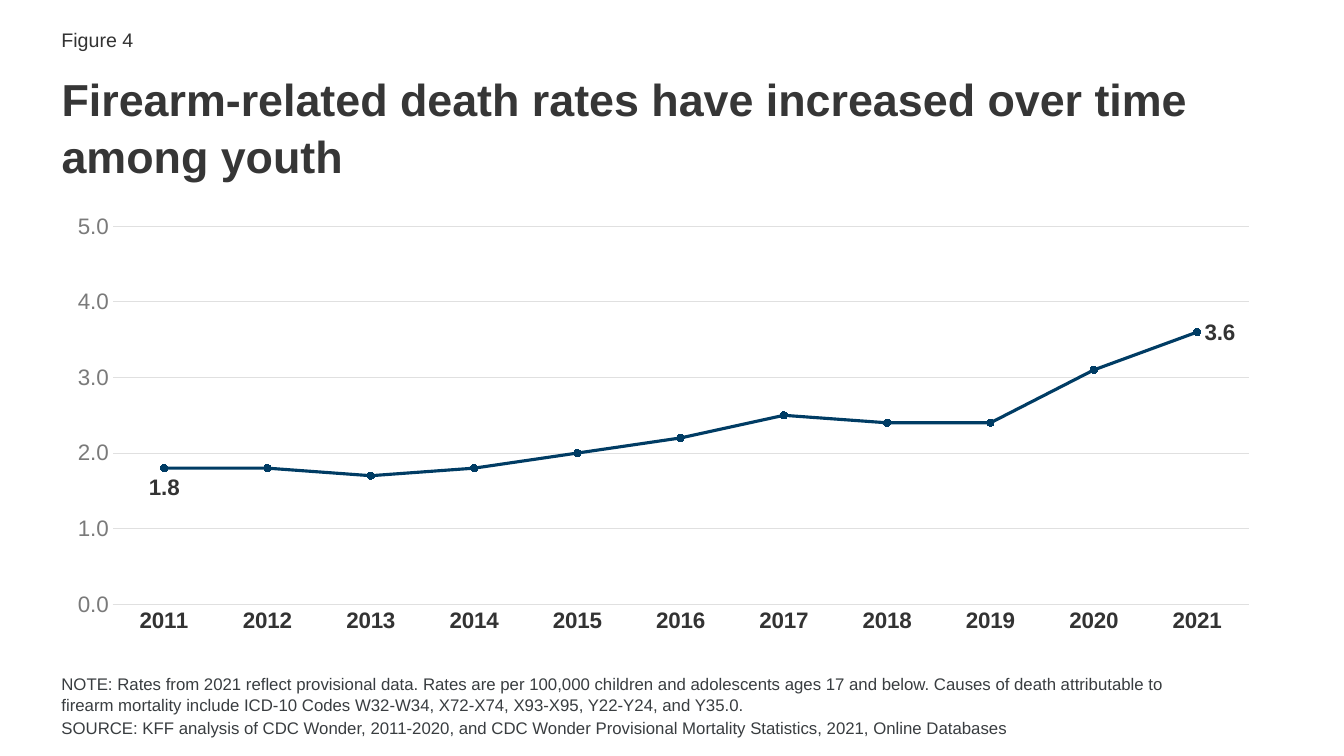
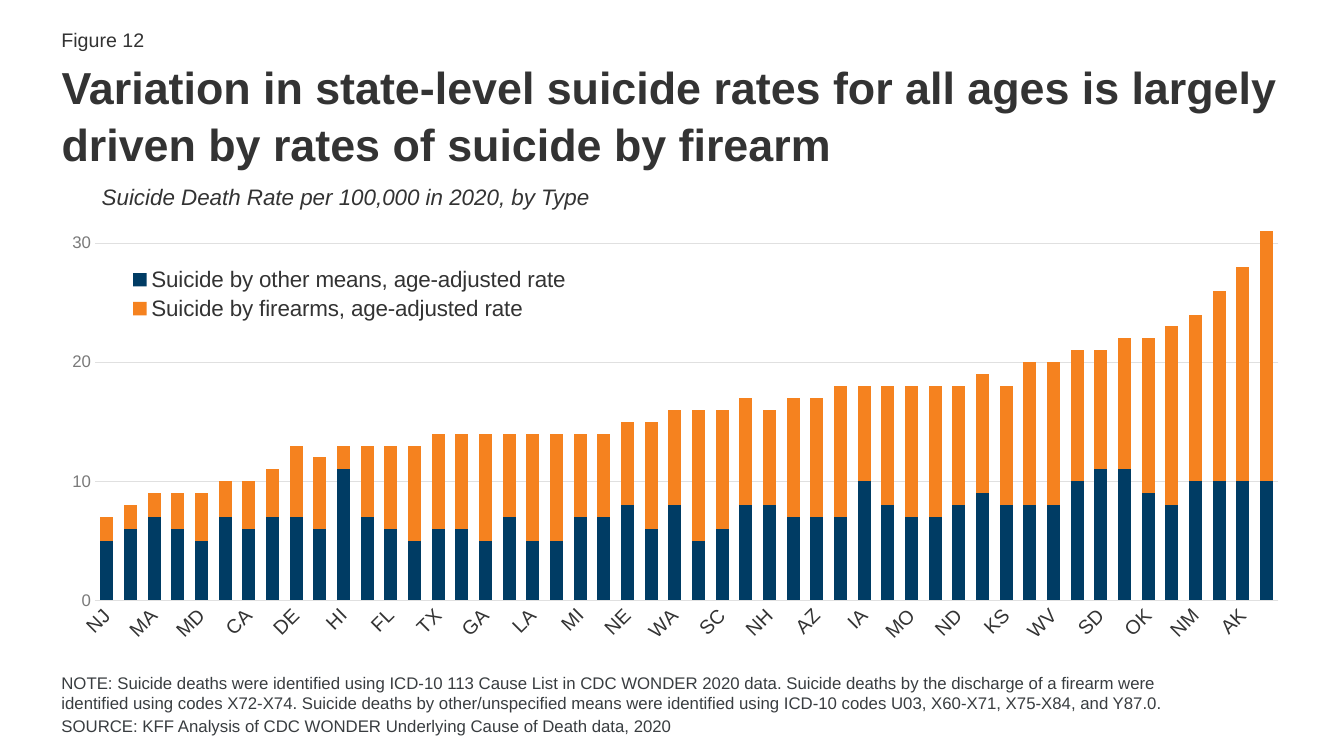
from lxml.etree import SubElement
from pptx import Presentation
from pptx.chart.data import CategoryChartData
from pptx.dml.color import RGBColor
from pptx.enum.chart import XL_CHART_TYPE, XL_LABEL_POSITION, XL_LEGEND_POSITION, XL_MARKER_STYLE, XL_TICK_MARK
from pptx.enum.text import MSO_ANCHOR, MSO_AUTO_SIZE, PP_ALIGN
from pptx.oxml.ns import qn
from pptx.util import Inches, Pt

WIDTH, HEIGHT = Inches(13.33), Inches(7.5)
FONT = "Arial"
INK, GREY, NOTE_INK, GRID = "333333", "7A7A7A", "393D40", "E0E0E0"
NAVY, ORANGE = "003C64", "F5821F"
LEFT = 3.83

FIGURE_BOX = (LEFT, 2.93, 38.63, 4.67)
SUBTITLE_BOX = (6.83, 23.6, 71.85, 4.93)

YEARS = [str(year) for year in range(2011, 2022)]
YOUTH_RATES = [1.8, 1.8, 1.7, 1.8, 2, 2.2, 2.5, 2.4, 2.4, 3.1, 3.6]

STATES = (
    "NJ NY MA RI MD CT CA IL DE PA HI MN FL NC TX VA GA OH LA MS MI WI NE IN WA "
    "AL SC ME NH TN AZ KY IA VT MO NV ND OR KS AR WV UT SD CO OK ID NM MT AK WY"
).split()
OTHER_MEANS = [
    5, 6, 7, 6, 5, 7, 6, 7, 7, 6, 11, 7, 6, 5, 6, 6, 5, 7, 5, 5, 7, 7, 8, 6, 8,
    5, 6, 8, 8, 7, 7, 7, 10, 8, 7, 7, 8, 9, 8, 8, 8, 10, 11, 11, 9, 8, 10, 10, 10, 10,
]
FIREARMS = [
    2, 2, 2, 3, 4, 3, 4, 4, 6, 6, 2, 6, 7, 8, 8, 8, 9, 7, 9, 9, 7, 7, 7, 9, 8,
    11, 10, 9, 8, 10, 10, 11, 8, 10, 11, 11, 10, 10, 10, 12, 12, 11, 10, 11, 13, 15, 14, 16, 18, 21,
]


def rgb(color):
    return RGBColor.from_string(color)


def place(box):
    left, top, width, height = box
    return (
        round(WIDTH * left / 100), round(HEIGHT * top / 100),
        round(WIDTH * width / 100), round(HEIGHT * height / 100),
    )


def assign(target, values):
    for name, value in values.items():
        setattr(target, name, value)


def set_font(font, size, color=INK, bold=False, italic=False):
    assign(font, {"name": FONT, "size": Pt(size), "bold": bold, "italic": italic})
    font.color.rgb = rgb(color)


def write(frame, lines, size, color=INK, anchor=MSO_ANCHOR.TOP, spacing=1.0, **emphasis):
    assign(frame, {"word_wrap": True, "auto_size": MSO_AUTO_SIZE.NONE, "vertical_anchor": anchor})
    for index, line in enumerate(lines):
        paragraph = frame.add_paragraph() if index else frame.paragraphs[0]
        assign(paragraph, {
            "text": line, "alignment": PP_ALIGN.LEFT, "line_spacing": spacing,
            "space_before": Pt(size * 0.2 if index else 0),
        })
        set_font(paragraph.font, size, color, **emphasis)


def add_text(slide, box, lines, size, **format_values):
    write(slide.shapes.add_textbox(*place(box)).text_frame, lines, size, **format_values)


def add_figure_slide(deck, figure, title, title_top, title_color, notes, notes_top):
    slide = deck.slides.add_slide(deck.slide_layouts[5])
    heading = slide.shapes.title
    left, top, width, height = place((LEFT, title_top, 92.4, 12.53))
    assign(heading, {"left": left, "top": top, "width": width, "height": height})
    write(heading.text_frame, [title], 32, color=title_color, spacing=1.05, bold=True)
    add_text(slide, FIGURE_BOX, [figure], 14, anchor=MSO_ANCHOR.MIDDLE)
    add_text(slide, (LEFT, notes_top, 84.45, 8.67), notes, 12, color=NOTE_INK)
    return slide


def set_layout(parent, position, shares, inner=False):
    for old in parent.findall(qn("c:layout")):
        parent.remove(old)
    layout = parent.makeelement(qn("c:layout"), {})
    parent.insert(position, layout)
    manual = SubElement(layout, qn("c:manualLayout"))
    settings = {"layoutTarget": "inner"} if inner else {}
    settings.update({"xMode": "edge", "yMode": "edge"})
    settings.update(zip("xywh", shares))
    for tag, value in settings.items():
        SubElement(manual, qn("c:" + tag)).set("val", str(value))


def style_axis(axis, size, color, bold=False):
    assign(axis, {"major_tick_mark": XL_TICK_MARK.NONE, "minor_tick_mark": XL_TICK_MARK.NONE})
    set_font(axis.tick_labels.font, size, color, bold)


def style_gridline(line):
    line.color.rgb = rgb(GRID)
    line.width = Pt(0.75)


def add_rate_chart(slide, box, kind, categories, rates, plot, scale, category_font, value_size):
    rate_data = CategoryChartData()
    rate_data.categories = categories
    for name, values in rates.items():
        rate_data.add_series(name, values)
    chart = slide.shapes.add_chart(kind, *place(box), rate_data).chart
    assign(chart, {"has_title": False, "has_legend": False})
    set_font(chart.font, 10)
    chart.plots[0].vary_by_categories = False
    style_axis(chart.category_axis, *category_font)
    style_gridline(chart.category_axis.format.line)
    value_axis = chart.value_axis
    style_axis(value_axis, value_size, GREY)
    value_axis.format.line.fill.background()
    maximum, step = scale
    assign(value_axis, {
        "minimum_scale": 0, "maximum_scale": maximum, "major_unit": step, "has_major_gridlines": True,
    })
    style_gridline(value_axis.major_gridlines.format.line)
    set_layout(chart.plots[0]._element.getparent(), 0, plot, inner=True)
    return chart


def add_youth_trend(slide, box):
    chart = add_rate_chart(
        slide, box, XL_CHART_TYPE.LINE_MARKERS, YEARS, {"Series 1": YOUTH_RATES},
        (0.05, 0.05, 0.93, 0.87), (5, 1), (16, INK, True), 16,
    )
    assign(chart.value_axis.tick_labels, {"number_format": "#,##0.0", "number_format_is_linked": False})
    trend = chart.series[0]
    trend.smooth = False
    trend.format.line.color.rgb = rgb(NAVY)
    trend.format.line.width = Pt(2.25)
    assign(trend.marker, {"style": XL_MARKER_STYLE.CIRCLE, "size": 5})
    trend.marker.format.fill.solid()
    trend.marker.format.fill.fore_color.rgb = rgb(NAVY)
    trend.marker.format.line.color.rgb = rgb(NAVY)
    trend.data_labels.show_value = False
    ends = {0: XL_LABEL_POSITION.BELOW, len(YEARS) - 1: XL_LABEL_POSITION.RIGHT}
    for index, position in ends.items():
        label = trend.points[index].data_label
        set_font(label.font, 16, bold=True)
        label.position = position


def add_state_columns(slide, box):
    chart = add_rate_chart(
        slide, box, XL_CHART_TYPE.COLUMN_STACKED, STATES,
        {
            "Suicide by other means, age-adjusted rate": OTHER_MEANS,
            "Suicide by firearms, age-adjusted rate": FIREARMS,
        },
        (0.035, 0.034, 0.953, 0.871), (35, 10), (14, INK), 12,
    )
    assign(chart.plots[0], {"gap_width": 80, "overlap": 100})
    for means, color in zip(chart.series, (NAVY, ORANGE)):
        means.format.fill.solid()
        means.format.fill.fore_color.rgb = rgb(color)
    chart.category_axis._element.xpath("c:txPr/a:bodyPr")[0].set("rot", "-2700000")
    chart.has_legend = True
    assign(chart.legend, {"position": XL_LEGEND_POSITION.BOTTOM, "include_in_layout": False})
    set_font(chart.legend.font, 16)
    set_layout(chart.legend._element, 1, (0.05, 0.2, 0.38, 0.13))


def main():
    deck = Presentation()
    assign(deck, {"slide_width": WIDTH, "slide_height": HEIGHT})

    youth = add_figure_slide(
        deck, "Figure 4", "Firearm-related death rates have increased over time among youth", 8.53, "363636",
        [
            "NOTE: Rates from 2021 reflect provisional data. Rates are per 100,000 children and adolescents "
            "ages 17 and below. Causes of death attributable to firearm mortality include ICD-10 Codes "
            "W32-W34, X72-X74, X93-X95, Y22-Y24, and Y35.0.",
            "SOURCE: KFF analysis of CDC Wonder, 2011-2020, and CDC Wonder Provisional Mortality Statistics, "
            "2021, Online Databases",
        ], 88.53,
    )
    add_youth_trend(youth, (LEFT, 27.07, 90.9, 57.47))

    states = add_figure_slide(
        deck, "Figure 12",
        "Variation in state-level suicide rates for all ages is largely driven by rates of suicide by firearm",
        6.93, INK,
        [
            "NOTE: Suicide deaths were identified using ICD-10 113 Cause List in CDC WONDER 2020 data. Suicide "
            "deaths by the discharge of a firearm were identified using codes X72-X74. Suicide deaths by "
            "other/unspecified means were identified using ICD-10 codes U03, X60-X71, X75-X84, and Y87.0.",
            "SOURCE: KFF Analysis of CDC WONDER Underlying Cause of Death data, 2020",
        ], 88.27,
    )
    add_state_columns(states, (LEFT, 22.13, 92.4, 63.33))
    add_text(states, SUBTITLE_BOX, ["Suicide Death Rate per 100,000 in 2020, by Type"], 16, italic=True)

    deck.save("out.pptx")


if __name__ == "__main__":
    main()
